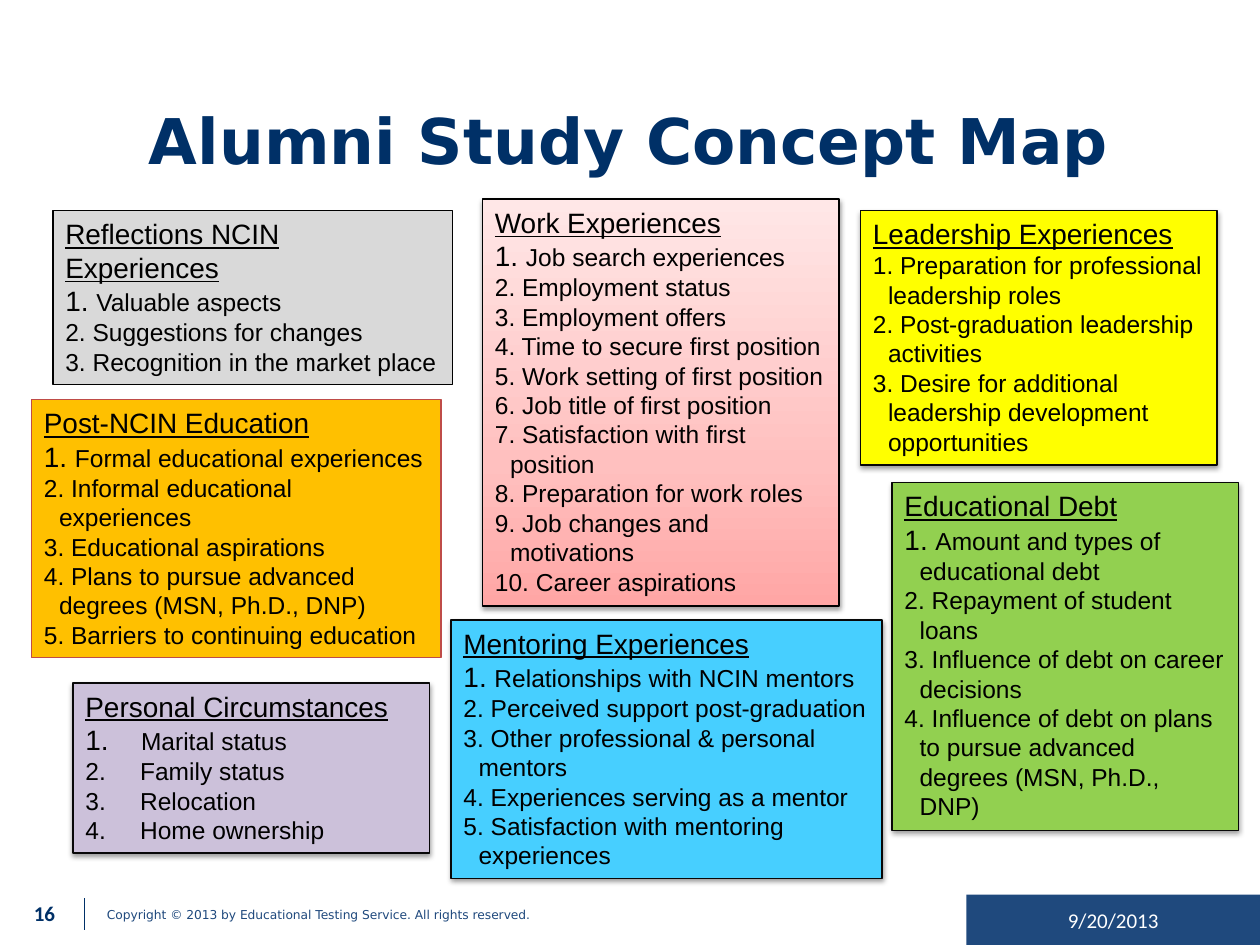
from copy import deepcopy
from dataclasses import dataclass

from lxml.etree import SubElement as Sub
from pptx import Presentation
from pptx.dml.color import RGBColor as Rgb
from pptx.enum.shapes import MSO_CONNECTOR as Link, MSO_SHAPE as Kind
from pptx.enum.text import MSO_ANCHOR as Anchor, MSO_AUTO_SIZE as Fit, PP_ALIGN as Align
from pptx.oxml.ns import qn
from pptx.util import Inches, Pt

HUES = {
    "navy": "003067", "blue": "1F497D", "white": "FFFFFF", "black": "000000",
    "ink": "080808", "rust": "BF4C48", "green": "92D050", "yellow": "FFFF00",
    "sky": "47CFFF", "lilac": "CCC1DA", "amber": "FFC000", "grey": "D9D9D9",
    "rose": "FFA6A5", "pink": "FFC0BF", "blush": "FFE7E7",
}
ROSE_STOPS = [(0, "rose"), (0.35, "pink"), (1, "blush")]


@dataclass
class Card:
    head: str
    items: list[str]
    place: tuple[float, float, float, float]
    fill: str | list[tuple[float, str]]
    edge: str = "ink"
    shade: bool = True
    hang: float = 0.12
    lead: int = 16  # size of the first number


CARDS = [
    Card("Work Experiences",
         ["Job search experiences", "Employment status", "Employment offers",
          "Time to secure first position", "Work setting of first position",
          "Job title of first position", "Satisfaction with first position",
          "Preparation for work roles", "Job changes and motivations",
          "Career aspirations"],
         (3.83, 1.58, 2.83, 3.23), ROSE_STOPS, edge="black"),
    Card("Educational Debt",
         ["Amount and types of educational debt", "Repayment of student loans",
          "Influence of debt on career decisions",
          "Influence of debt on plans to pursue advanced degrees (MSN, Ph.D., DNP)"],
         (7.08, 3.83, 2.75, 2.76), "green"),
    Card("Leadership Experiences",
         ["Preparation for professional leadership roles",
          "Post-graduation leadership activities",
          "Desire for additional leadership development opportunities"],
         (6.83, 1.67, 2.83, 2.02), "yellow", lead=14),
    Card("Mentoring Experiences",
         ["Relationships with NCIN mentors", "Perceived support post-graduation",
          "Other professional & personal mentors", "Experiences serving as a mentor",
          "Satisfaction with mentoring experiences"],
         (3.58, 4.92, 3.42, 2.05), "sky"),
    Card("Personal Circumstances",
         ["Marital status", "Family status", "Relocation", "Home ownership"],
         (0.58, 5.42, 2.83, 1.35), "lilac", hang=0.38),
    Card("Post-NCIN Education",
         ["Formal educational experiences", "Informal educational experiences",
          "Educational aspirations",
          "Plans to pursue advanced degrees (MSN, Ph.D., DNP)",
          "Barriers to continuing education"],
         (0.25, 3.17, 3.25, 2.05), "amber", edge="rust", shade=False),
    Card("Reflections NCIN Experiences",
         ["Valuable aspects", "Suggestions for changes",
          "Recognition in the market place"],
         (0.42, 1.67, 3.17, 1.38), "grey", edge="black", shade=False),
]


def hue(name: str) -> Rgb:
    return Rgb.from_string(HUES[name])


def write(para, text: str, *, size: float, font: str = "Arial", color: str = "black",
          bold: bool = False, under: bool = False, align=Align.LEFT) -> None:
    para.alignment = align
    run = para.add_run()
    run.text = text
    face = run.font
    face.name, face.size, face.bold, face.underline = font, Pt(size), bold, under
    face.color.rgb = hue(color)


def count(para, hang: float) -> None:
    """Number the paragraph with a hanging indent."""
    props = para._p.get_or_add_pPr()
    props.set("marL", str(Inches(hang)))
    props.set("indent", str(-Inches(hang)))
    Sub(props, qn("a:buFont"), typeface="+mj-lt")
    Sub(props, qn("a:buAutoNum"), type="arabicPeriod")


def blend(fill, stops: list[tuple[float, str]]) -> None:
    """Fill with a gradient that runs from bottom to top."""
    fill.gradient()
    fill.gradient_angle = 90
    group = fill._fill._gradFill.find(qn("a:gsLst"))
    while len(group) < len(stops):
        group.append(deepcopy(group[-1]))
    for stop, (where, name) in zip(fill.gradient_stops, stops):
        stop.position = where
        stop.color.rgb = hue(name)


def cast(shape) -> None:
    """Add a soft shadow just below the shape."""
    group = shape._element.spPr.find(qn("a:effectLst"))
    shadow = Sub(group, qn("a:outerShdw"), blurRad=str(Pt(3.1)), dist=str(Pt(1.6)),
                 dir="5400000", rotWithShape="0")
    tint = Sub(shadow, qn("a:srgbClr"), val=HUES["black"])
    Sub(tint, qn("a:alpha"), val="38000")


def block(slide, place: tuple[float, float, float, float]):
    shape = slide.shapes.add_shape(Kind.RECTANGLE, *map(Inches, place))
    shape.shadow.inherit = False
    shape.text_frame.word_wrap = True
    return shape


def draw(slide, card: Card) -> None:
    shape = block(slide, card.place)
    if isinstance(card.fill, str):
        shape.fill.solid()
        shape.fill.fore_color.rgb = hue(card.fill)
    else:
        blend(shape.fill, card.fill)
    shape.line.color.rgb = hue(card.edge)
    shape.line.width = Pt(0.75)
    if card.shade:
        cast(shape)
    frame = shape.text_frame
    frame.vertical_anchor = Anchor.TOP
    frame.auto_size = Fit.SHAPE_TO_FIT_TEXT
    write(frame.paragraphs[0], card.head, size=16, under=True)
    for i, item in enumerate(card.items):
        para = frame.add_paragraph()
        count(para, card.hang)
        write(para, " ", size=14 if i else card.lead)
        write(para, item, size=14)


def label(slide, place: tuple[float, float, float, float], text: str,
          anchor=Anchor.TOP, **style) -> None:
    frame = slide.shapes.add_textbox(*map(Inches, place)).text_frame
    frame.word_wrap = True
    frame.vertical_anchor = anchor
    write(frame.paragraphs[0], text, **style)


def rule(slide, x: float, top: float, foot: float) -> None:
    line = slide.shapes.add_connector(
        Link.STRAIGHT, Inches(x), Inches(top), Inches(x), Inches(foot))
    line.line.color.rgb = hue("navy")
    line.line.width = Pt(0.75)
    Sub(line._element.spPr, qn("a:effectLst"))


def stamp(slide, text: str) -> None:
    """Draw the date bar in the corner."""
    bar = block(slide, (7.67, 7.1, 2.33, 0.4))
    bar.fill.solid()
    bar.fill.fore_color.rgb = hue("blue")
    bar.line.fill.background()
    bar.text_frame.vertical_anchor = Anchor.MIDDLE
    write(bar.text_frame.paragraphs[0], text, size=12, font="Calibri",
          color="white", align=Align.CENTER)


def main() -> None:
    deck = Presentation()
    deck.slide_width, deck.slide_height = Inches(10), Inches(7.5)
    slide = deck.slides.add_slide(deck.slide_layouts[6])
    label(slide, (0.75, 7.15, 6.25, 0.34),
          "Copyright © 2013 by Educational Testing Service. All rights reserved.",
          size=7, font="DejaVu Sans", color="blue")
    rule(slide, 0.67, 7.13, 7.38)
    label(slide, (0.74, 0.54, 8.5, 1.13), "Alumni Study Concept Map", Anchor.MIDDLE,
          size=36, font="DejaVu Sans", color="navy", bold=True, align=Align.CENTER)
    for card in CARDS:
        draw(slide, card)
    stamp(slide, "9/20/2013")
    label(slide, (0.17, 7.1, 0.5, 0.32), "16",
          size=12, font="Calibri", color="navy", bold=True)
    deck.save("out.pptx")


if __name__ == "__main__":
    main()
